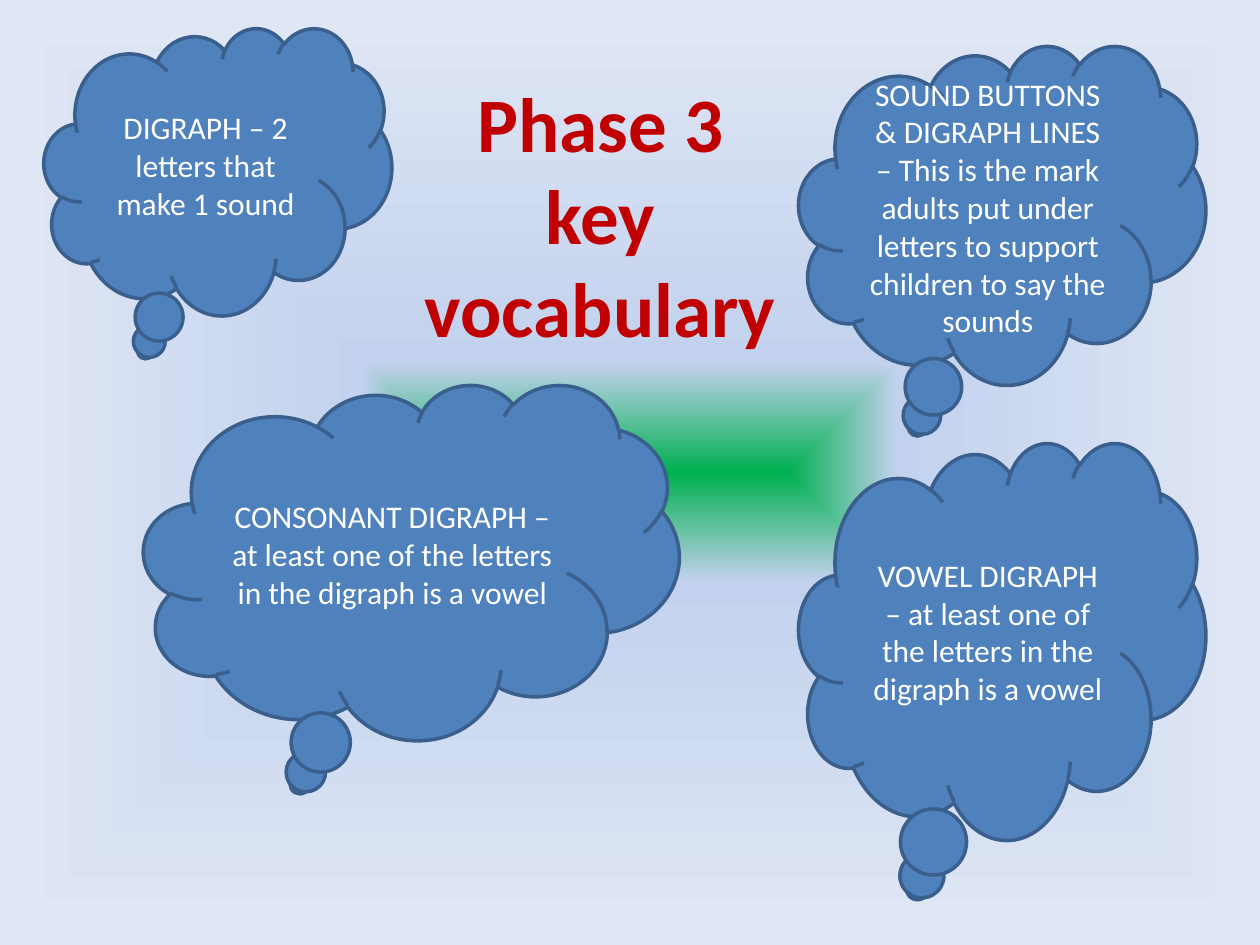
import pptx
import pptx.util
import lxml.etree
from pptx.dml.color import RGBColor
from pptx.enum.shapes import MSO_SHAPE
from pptx.enum.text import MSO_ANCHOR, MSO_AUTO_SIZE, PP_ALIGN
from pptx.oxml import parse_xml
from pptx.oxml.ns import nsdecls

Pt = pptx.util.Pt
HUES = {
    "core": "00B050", "mid": "C2D1ED", "edge": "E1E8F5",
    "title": "C00000", "rim": "D73A36",
    "cloud": "4F81BD", "line": "3A5F8C", "text": "FFFFFF",
}
CLOUDS = [
    ((25.2, 15.84, 198.72, 164.16), "DIGRAPH – 2 letters that make 1 sound"),
    ((456.48, 252.72, 232.56, 226.8),
     "VOWEL DIGRAPH – at least one of the letters in the digraph is a vowel"),
    ((82.08, 219.6, 306, 203.04),
     "CONSONANT DIGRAPH – at least one of the letters in the digraph is a vowel"),
    ((456.48, 25.92, 232.56, 193.68),
     "SOUND BUTTONS & DIGRAPH LINES – This is the mark adults put under "
     "letters to support children to say the sounds"),
]


def hue(name):
    return RGBColor.from_string(HUES[name])


def glow(slide):
    """Fill the background with a gradient that spreads from the centre."""
    slide.background.fill.gradient()
    stops = "".join(
        f'<a:gs pos="{pos * 1000}"><a:srgbClr val="{HUES[name]}"/></a:gs>'
        for pos, name in ((0, "core"), (23, "mid"), (100, "edge")))
    grad = parse_xml(
        f'<a:gradFill {nsdecls("a")} rotWithShape="1"><a:gsLst>{stops}</a:gsLst>'
        '<a:path path="shape"><a:fillToRect l="50000" t="50000" r="50000" '
        'b="50000"/></a:path></a:gradFill>')
    old = next(slide.element.iter("{*}gradFill"))
    old.getparent().replace(old, grad)


def write(frame, text, size, name, bold=False):
    frame.word_wrap = True
    para = frame.paragraphs[0]
    para.alignment = PP_ALIGN.CENTER
    run = para.add_run()
    run.text = text
    font = run.font
    font.name, font.size, font.bold = "Calibri", Pt(size), bold
    font.color.rgb = hue(name)
    return run


def title(slide, box):
    frame = slide.shapes.add_textbox(*map(Pt, box)).text_frame
    run = write(frame, "Phase 3 key vocabulary", 44, "title", True)
    frame.auto_size = MSO_AUTO_SIZE.SHAPE_TO_FIT_TEXT
    rim = parse_xml(
        f'<a:ln {nsdecls("a")} w="{Pt(1.42)}"><a:solidFill>'
        f'<a:srgbClr val="{HUES["rim"]}"/></a:solidFill></a:ln>')
    run.font._element.insert(0, rim)


def cloud(slide, box, text):
    shape = slide.shapes.add_shape(MSO_SHAPE.CLOUD_CALLOUT, *map(Pt, box))
    shape.shadow.inherit = False
    shape.fill.solid()
    shape.fill.fore_color.rgb = hue("cloud")
    shape.line.color.rgb = hue("line")
    shape.line.width = Pt(2)
    shape.text_frame.vertical_anchor = MSO_ANCHOR.MIDDLE
    write(shape.text_frame, text, 18, "text")


def main():
    deck = pptx.Presentation()
    deck.slide_width, deck.slide_height = Pt(720), Pt(540)
    slide = deck.slides.add_slide(deck.slide_layouts[6])
    glow(slide)
    title(slide, (229.68, 39.6, 226.8, 167.04))
    for box, text in CLOUDS:
        cloud(slide, box, text)
    deck.save("out.pptx")


if __name__ == "__main__":
    main()
